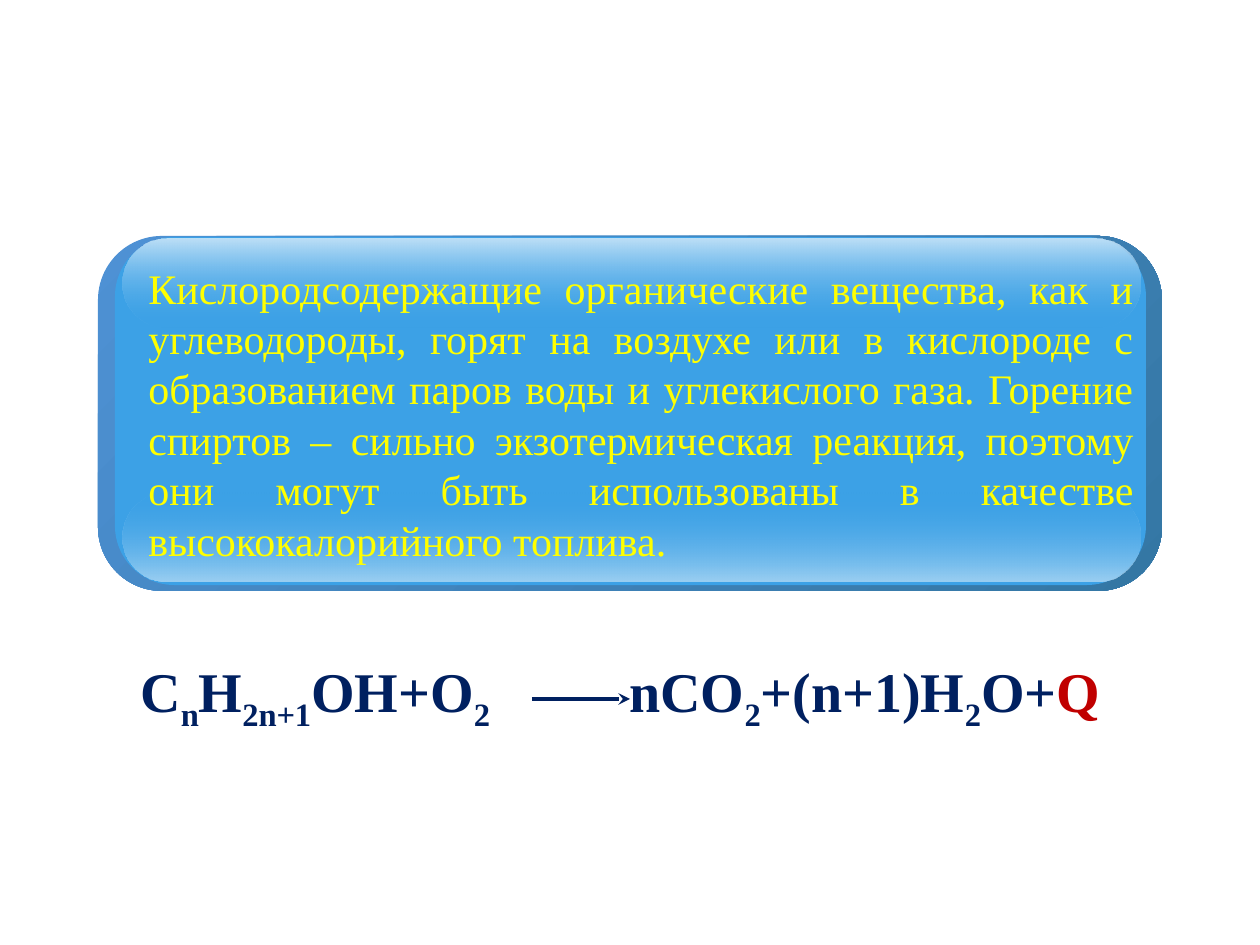
from lxml.etree import SubElement
from pptx import Presentation
from pptx.dml.color import RGBColor
from pptx.enum.shapes import MSO_CONNECTOR as LINE, MSO_SHAPE as SHAPE
from pptx.enum.text import MSO_AUTO_SIZE as FIT, PP_ALIGN as ALIGN
from pptx.oxml.ns import qn
from pptx.util import Emu, Pt

PX = 914400 // 126
NAVY = RGBColor(0x00, 0x20, 0x60)
RED = RGBColor(0xC0, 0x00, 0x00)
YELLOW = RGBColor(0xFF, 0xFF, 0x00)
BLUE = RGBColor(0x3C, 0xA1, 0xE6)
RIM_LIGHT = RGBColor(0x4E, 0x91, 0xD4)
RIM_DARK = RGBColor(0x34, 0x77, 0xA4)
GLOSS_TOP = RGBColor(0xBE, 0xE0, 0xF7)
GLOSS_BOTTOM = RGBColor(0x9B, 0xCF, 0xF2)


def px(n):
    return Emu(n * PX)


class Board:
    font = "Times New Roman"

    def __init__(self, slide):
        self.slide = slide
        self.shapes = slide.shapes

    def group(self):
        self.shapes = self.slide.shapes.add_group_shape().shapes

    def panel(self, x, y, w, h, radius, colors, angle=0, clear=None):
        """Rounded panel; two colours make a gradient, clear is the see-through stop."""
        sp = self.shapes.add_shape(SHAPE.ROUNDED_RECTANGLE, px(x), px(y), px(w), px(h))
        sp.adjustments[0] = radius
        sp.shadow.inherit = False
        sp.line.fill.background()
        if len(colors) == 1:
            sp.fill.solid()
            sp.fill.fore_color.rgb = colors[0]
            return
        sp.fill.gradient()
        sp.fill.gradient_angle = 360 - angle
        for stop, color in zip(sp.fill.gradient_stops, colors):
            stop.color.rgb = color
        if clear is not None:
            rgb = list(sp.element.spPr.iter(qn("a:srgbClr")))[clear]
            SubElement(rgb, qn("a:alpha"), val="0")

    def text(self, x, y, w, h, runs, size, bold=False, align=None, tab=None):
        """Runs are (text, colour, is subscript)."""
        box = self.shapes.add_textbox(px(x), px(y), px(w), px(h))
        tf = box.text_frame
        tf.word_wrap = True
        tf.auto_size = FIT.SHAPE_TO_FIT_TEXT
        p = tf.paragraphs[0]
        p.alignment = align
        if tab:
            tabs = SubElement(p._p.get_or_add_pPr(), qn("a:tabLst"))
            SubElement(tabs, qn("a:tab"), pos=str(px(tab)), algn="l")
        for text, color, subscript in runs:
            r = p.add_run()
            r.text = text
            r.font.name = self.font
            r.font.size = Pt(size)
            r.font.bold = bold
            r.font.color.rgb = color
            if subscript:
                r.font._element.set("baseline", "-25000")

    def arrow(self, x1, y1, x2, y2, color, width):
        line = self.shapes.add_connector(LINE.STRAIGHT, px(x1), px(y1), px(x2), px(y2))
        line.line.color.rgb = color
        line.line.width = Pt(width)
        SubElement(line.line._get_or_add_ln(), qn("a:tailEnd"), type="stealth")
        SubElement(line._element.spPr, qn("a:effectLst"))


def main():
    prs = Presentation()
    prs.slide_width, prs.slide_height = px(1260), px(945)
    board = Board(prs.slides.add_slide(prs.slide_layouts[6]))

    # Glossy panel with the statement
    board.group()
    board.panel(98, 236, 1064, 355, 0.18, [RIM_LIGHT, RIM_DARK], 45)
    board.panel(115, 237, 1031, 348, 0.17, [BLUE])
    board.panel(123, 493, 1018, 89, 0.5, [BLUE, GLOSS_BOTTOM], 90, clear=0)
    board.panel(123, 239, 1018, 89, 0.5, [GLOSS_TOP, BLUE], 90, clear=1)
    statement = (
        "Кислородсодержащие органические вещества, как и углеводороды, горят "
        "на воздухе или в кислороде с образованием паров воды и углекислого газа. "
        "Горение спиртов – сильно экзотермическая реакция, поэтому они могут быть "
        "использованы в качестве высококалорийного топлива."
    )
    board.text(136, 256, 1010, 318, [(statement, YELLOW, False)], 24, align=ALIGN.JUSTIFY)

    # Combustion equation, with every second part as a subscript
    board.group()
    parts = ["C", "n", "H", "2n+1", "OH+O", "2", "\tnCO", "2", "+(n+1)H", "2", "O+"]
    runs = [(part, NAVY, i % 2 == 1) for i, part in enumerate(parts)]
    runs.append(("Q", RED, False))
    board.text(128, 650, 1023, 81, runs, 32, bold=True, tab=489)
    board.arrow(532, 699, 630, 699, NAVY, 2.25)

    prs.save("out.pptx")


if __name__ == "__main__":
    main()
